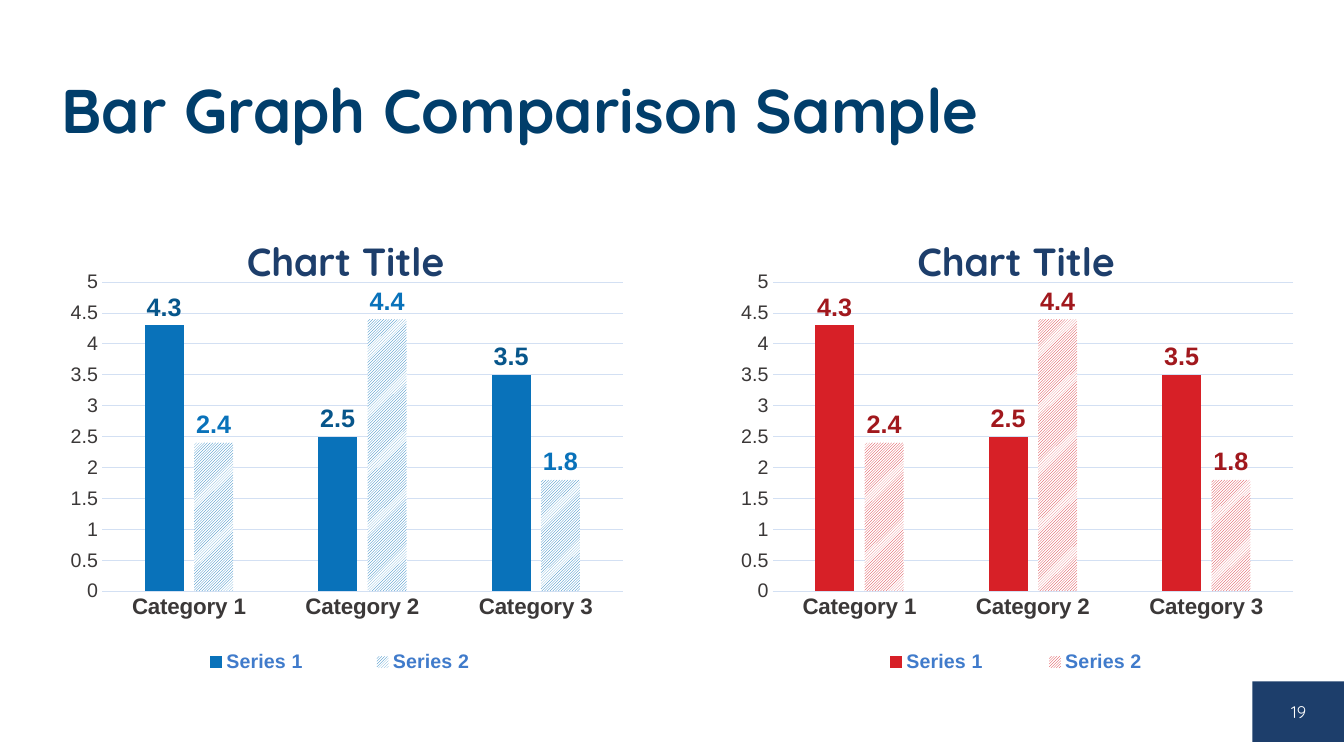
from lxml import etree
from pptx import Presentation
from pptx import util as u
from pptx.chart.data import CategoryChartData
from pptx.dml.color import RGBColor
from pptx.enum import chart as charts, dml, shapes, text
from pptx.oxml import parse_xml
from pptx.oxml.ns import nsdecls, qn

NAVY, GRID, GRAY, WHITE = "1D3E6B", "D3E0F3", "3B3838", "FFFFFF"
CATEGORIES = ["Category 1", "Category 2", "Category 3"]
VALUES = {"Series 1": [4.3, 2.5, 3.5], "Series 2": [2.4, 4.4, 1.8]}


def rgb(value):
    return RGBColor.from_string(value)


def style(font, size, color, name, bold=False):
    font.size, font.bold, font.name = u.Pt(size), bold, name
    font.color.rgb = rgb(color)


def style_line(line, color):
    line.color.rgb = rgb(color)
    line.width = u.Pt(0.75)


def set_layout(element, index, **settings):
    """Give a chart part a manual layout in fractions of the chart."""
    for old in element.findall(qn("c:layout")):
        element.remove(old)
    layout = parse_xml(f"<c:layout {nsdecls('c')}><c:manualLayout/></c:layout>")
    for tag, value in settings.items():
        etree.SubElement(layout[0], qn(f"c:{tag}")).set("val", str(value))
    element.insert(index, layout)


def add_title(page, left, top, width, height):
    title = page.shapes.title
    title.left, title.top = u.Inches(left), u.Inches(top)
    title.width, title.height = u.Inches(width), u.Inches(height)
    frame = title.text_frame
    frame.text = "Bar Graph Comparison Sample"
    frame.vertical_anchor = text.MSO_ANCHOR.MIDDLE
    para = frame.paragraphs[0]
    para.alignment = text.PP_ALIGN.LEFT
    para.line_spacing = 0.9
    style(para.runs[0].font, 44, "013E6B", "Quicksand", True)


def add_page_number(page, left, top, width, height):
    box = page.shapes.add_shape(shapes.MSO_SHAPE.RECTANGLE, u.Inches(left), u.Inches(top),
                                u.Inches(width), u.Inches(height))
    box.shadow.inherit = False
    box.fill.solid()
    box.fill.fore_color.rgb = rgb(NAVY)
    box.line.fill.background()
    box.text_frame.text = "19"
    box.text_frame.vertical_anchor = text.MSO_ANCHOR.MIDDLE
    para = box.text_frame.paragraphs[0]
    para.alignment = text.PP_ALIGN.CENTER
    style(para.runs[0].font, 12, WHITE, "Quicksand")


def style_axes(chart):
    category, value = chart.category_axis, chart.value_axis
    for axis in (category, value):
        axis.major_tick_mark = axis.minor_tick_mark = charts.XL_TICK_MARK.NONE
    style(category.tick_labels.font, 16, GRAY, "Arial", True)
    style(value.tick_labels.font, 14, GRAY, "Arial")
    style_line(category.format.line, GRID)
    value.format.line.fill.background()
    value.has_major_gridlines = True
    style_line(value.major_gridlines.format.line, GRID)
    value.minimum_scale, value.maximum_scale, value.major_unit = 0, 5, 0.5


def style_bars(plot, bar_color, label_colors):
    plot.gap_width, plot.overlap, plot.vary_by_categories = 219, -27, False
    solid, hatched = (series.format.fill for series in plot.series)
    solid.solid()
    solid.fore_color.rgb = rgb(bar_color)
    hatched.patterned()
    hatched.pattern = dml.MSO_PATTERN.DARK_UPWARD_DIAGONAL
    hatched.fore_color.rgb = rgb(bar_color)
    hatched.back_color.rgb = rgb(WHITE)
    for series, color in zip(plot.series, label_colors):
        labels = series.data_labels
        labels.show_value = True
        labels.position = charts.XL_LABEL_POSITION.OUTSIDE_END
        style(labels.font, 18, color, "Arial", True)


def add_bar_chart(page, left, top, width, height, bar_color, label_colors, legend_x, legend_w):
    data = CategoryChartData()
    data.categories = CATEGORIES
    for name, values in VALUES.items():
        data.add_series(name, values)
    chart = page.shapes.add_chart(charts.XL_CHART_TYPE.COLUMN_CLUSTERED, u.Inches(left),
                                  u.Inches(top), u.Inches(width), u.Inches(height), data).chart
    style(chart.font, 10, NAVY, "Lato")

    # Chart title
    heading = chart.chart_title
    heading.text_frame.text = "Chart Title"
    style(heading.text_frame.paragraphs[0].runs[0].font, 28, NAVY, "Quicksand", True)
    set_layout(heading._element, 1, xMode="edge", yMode="edge", x=0.33, y=0.05)

    # Plot area
    style_axes(chart)
    style_bars(chart.plots[0], bar_color, label_colors)
    area = chart._chartSpace.chart.plotArea
    set_layout(area, 0, layoutTarget="inner", xMode="edge", yMode="edge",
               x=0.089, y=0.168, w=0.911, h=0.644)
    area.append(parse_xml(f'<c:spPr {nsdecls("c", "a")}><a:solidFill>'
                          f'<a:srgbClr val="{WHITE}"/></a:solidFill></c:spPr>'))

    # Legend
    chart.has_legend = True
    legend = chart.legend
    legend.position = charts.XL_LEGEND_POSITION.BOTTOM
    legend.include_in_layout = False
    style(legend.font, 14, "407BCB", "Arial", True)
    set_layout(legend._element, 1, xMode="edge", yMode="edge",
               x=legend_x, y=0.92, w=legend_w, h=0.08)


def main():
    deck = Presentation()
    deck.slide_width, deck.slide_height = u.Inches(13.33), u.Inches(7.5)
    page = deck.slides.add_slide(deck.slide_layouts[5])
    add_title(page, 0.51, 0.4, 12.32, 1.45)
    add_page_number(page, 12.42, 6.76, 0.92, 0.6)
    add_bar_chart(page, 0.51, 2, 5.67, 4.76, "0972BA", ("07568B", "0972BA"), 0.16, 0.69)
    add_bar_chart(page, 7.16, 2, 5.67, 4.76, "D72027", ("A1181D", "A1181D"), 0.19, 0.65)
    deck.save("out.pptx")


if __name__ == "__main__":
    main()
